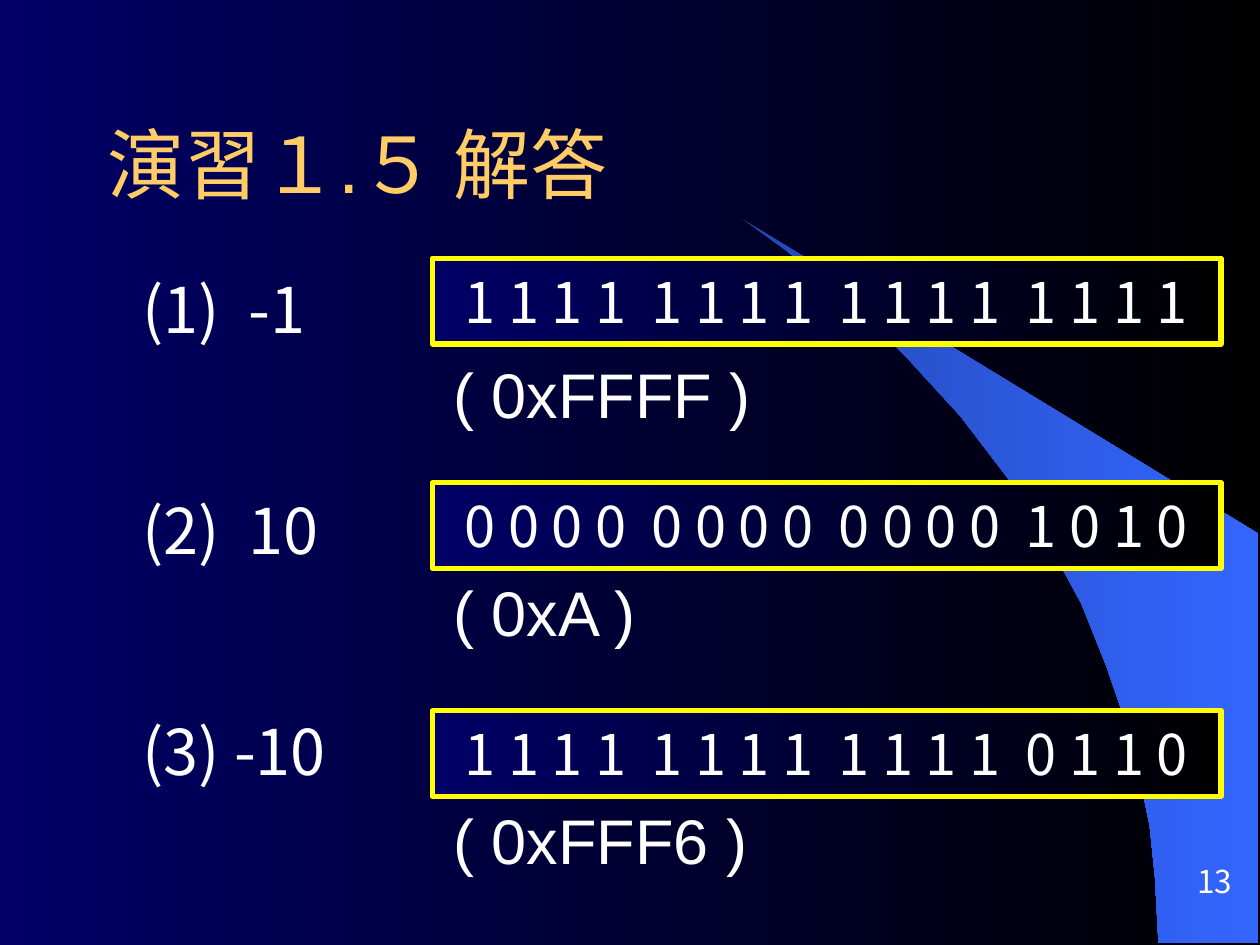
"""Build the answer slide for exercise 1.5 on two's complement numbers."""
from pptx import Presentation, util as u
from pptx.dml.color import RGBColor
from pptx.enum import shapes, text

CJK, LATIN = "Noto Sans CJK JP", "Arial"
WHITE, YELLOW, GOLD = "FFFFFF", "FFFF00", "FFCC66"
NIGHT = ("000066", "000000")
SWEEP = ("2449B6", "3366FF")

TITLE = "演習１.５ 解答"
PAGE = "13"
ANSWERS = [
    {"label": "(1)  -1", "bits": "1 1 1 1  1 1 1 1  1 1 1 1  1 1 1 1",
     "hex": "( 0xFFFF )", "bits_top": 147.6, "hex_top": 196.6},
    {"label": "(2)  10", "bits": "0 0 0 0  0 0 0 0  0 0 0 0  1 0 1 0",
     "hex": "( 0xA )", "bits_top": 275.8, "hex_top": 321.1},
    {"label": "(3) -10", "bits": "1 1 1 1  1 1 1 1  1 1 1 1  0 1 1 0",
     "hex": "( 0xFFF6 )", "bits_top": 406.1, "hex_top": 451.4},
]
SWOOSH = [(662.4, 538.6), (719.3, 539.3), (719.3, 304.6), (424.1, 124.6),
          (449.3, 143.3), (470.2, 159.8), (493.2, 180), (515.5, 201.6),
          (548.6, 237.6), (578.2, 276.5), (599, 310.3), (617.8, 344.9),
          (632.2, 380.2), (643, 411.8), (650.2, 438.5), (657.4, 472.3),
          (660.2, 501.1)]


def rgb(code):
    return RGBColor.from_string(code)


def box(left, top, width, height):
    return [u.Pt(v) for v in (left, top, width, height)]


def grade(fill, colours):
    fill.gradient()
    fill.gradient_angle = 0
    for stop, code in zip(fill.gradient_stops, colours):
        stop.color.rgb = rgb(code)


def write(shape, lines, size, font=CJK, colour=WHITE, align=text.PP_ALIGN.LEFT,
          anchor=text.MSO_ANCHOR.TOP, insets=(7.2, 3.6, 7.2, 3.6), wrap=True,
          line_height=None, after=0):
    frame = shape.text_frame
    frame.word_wrap = wrap
    frame.auto_size = text.MSO_AUTO_SIZE.NONE
    frame.vertical_anchor = anchor
    (frame.margin_left, frame.margin_top,
     frame.margin_right, frame.margin_bottom) = box(*insets)
    frame.text = "\n".join(lines)
    for paragraph in frame.paragraphs:
        paragraph.alignment = align
        paragraph.space_before = u.Pt(0)
        paragraph.space_after = u.Pt(after)
        if line_height:
            paragraph.line_spacing = u.Pt(line_height)
        for run in paragraph.runs:
            run.font.size = u.Pt(size)
            run.font.name = font
            run.font.color.rgb = rgb(colour)


def main():
    deck = Presentation()
    deck.slide_width, deck.slide_height = u.Pt(720), u.Pt(540)
    slide = deck.slides.add_slide(deck.slide_layouts[5])
    grade(slide.background.fill, NIGHT)

    outline = slide.shapes.build_freeform(*SWOOSH[0], scale=u.Pt(1))
    outline.add_line_segments(SWOOSH[1:], close=True)
    swoosh = outline.convert_to_shape()
    swoosh.shadow.inherit = False
    swoosh.line.fill.background()
    grade(swoosh.fill, SWEEP)

    title = slide.shapes.title
    title.left, title.top, title.width, title.height = box(54, 48.2, 636.5, 90)
    write(title, [TITLE], 44, font=LATIN, colour=GOLD,
          anchor=text.MSO_ANCHOR.MIDDLE)

    labels = slide.shapes.add_textbox(*box(31, 134, 215, 320))
    write(labels, [answer["label"] for answer in ANSWERS], 36,
          insets=(50.4, 11.5, 0, 3.6), line_height=52, after=74.6)

    for answer in ANSWERS:
        bits = slide.shapes.add_shape(
            shapes.MSO_SHAPE.RECTANGLE, *box(247, answer["bits_top"], 450.7, 49))
        bits.shadow.inherit = False
        grade(bits.fill, NIGHT)
        bits.line.color.rgb = rgb(YELLOW)
        bits.line.width = u.Pt(3)
        write(bits, [answer["bits"]], 32, align=text.PP_ALIGN.CENTER,
              anchor=text.MSO_ANCHOR.MIDDLE, insets=(7.2, 0, 7.2, 0))

        hexadecimal = slide.shapes.add_textbox(
            *box(252, answer["hex_top"], 430.6, 50.4))
        write(hexadecimal, [answer["hex"]], 36, font=LATIN,
              insets=(7.2, 6.6, 7.2, 0))

    page = slide.shapes.add_textbox(*box(637.9, 483.8, 73.4, 30.2))
    write(page, [PAGE], 18, align=text.PP_ALIGN.RIGHT,
          anchor=text.MSO_ANCHOR.BOTTOM, insets=(7.2, 0, 7.2, 0))

    deck.save("out.pptx")


if __name__ == "__main__":
    main()
